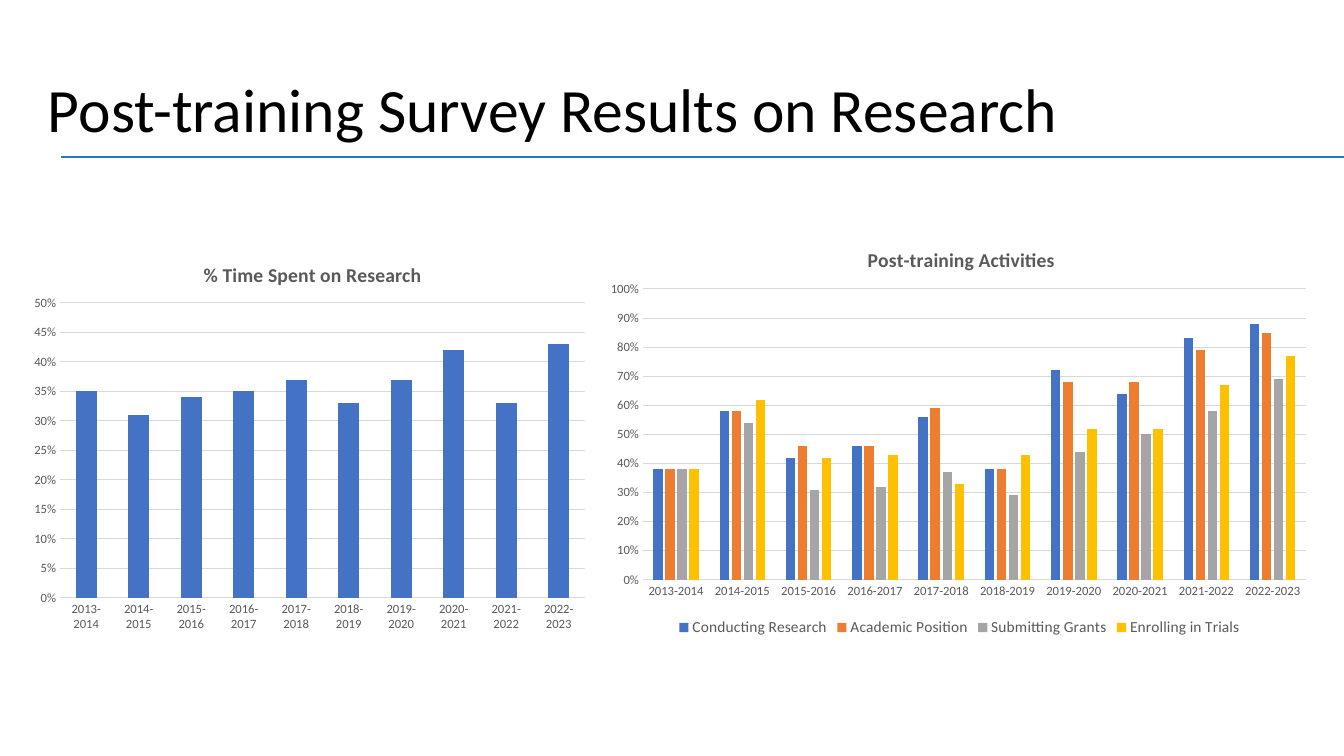
from lxml import etree
from pptx import Presentation
from pptx.chart.data import CategoryChartData
from pptx.dml.color import RGBColor
from pptx.enum.chart import XL_CHART_TYPE, XL_LEGEND_POSITION, XL_TICK_MARK
from pptx.enum.text import MSO_ANCHOR
from pptx.oxml import parse_xml
from pptx.oxml.ns import nsdecls, qn
from pptx.util import Pt

STACKED, CLUSTERED = XL_CHART_TYPE.COLUMN_STACKED, XL_CHART_TYPE.COLUMN_CLUSTERED
BOTTOM, NO_TICK, MIDDLE = XL_LEGEND_POSITION.BOTTOM, XL_TICK_MARK.NONE, MSO_ANCHOR.MIDDLE

# Content
FONT, GREY, GRID = "Calibri", "595959", "D9D9D9"
TITLE = "Post-training Survey Results on Research"
YEARS = [f"{year}-{year + 1}" for year in range(2013, 2023)]

# Boxes are left, top, width, height in px on the slide
CHARTS = [
    {
        "title": "% Time Spent on Research", "type": STACKED,
        "box": (23, 239, 574, 401), "plot": (60, 303, 525, 295), "title_at": (200, 258),
        "gap": 150, "overlap": 100, "max": 0.5, "step": 0.05,
        "axis_line": False, "legend": False,
        "series": [
            ("Series 1", "4472C4", (35, 31, 34, 35, 37, 33, 37, 42, 33, 43)),
        ],
    },
    {
        "title": "Post-training Activities", "type": CLUSTERED,
        "box": (597, 224, 725, 417), "plot": (643, 289, 663, 291), "title_at": (864, 243),
        "gap": 219, "overlap": -27, "max": 1, "step": 0.1,
        "axis_line": True, "legend": True,
        "series": [
            ("Conducting Research", "4472C4", (38, 58, 42, 46, 56, 38, 72, 64, 83, 88)),
            ("Academic Position", "ED7D31", (38, 58, 46, 46, 59, 38, 68, 68, 79, 85)),
            ("Submitting Grants", "A5A5A5", (38, 54, 31, 32, 37, 29, 44, 50, 58, 69)),
            ("Enrolling in Trials", "FFC000", (38, 62, 42, 43, 33, 43, 52, 52, 67, 77)),
        ],
    },
]


def px(n):
    return round(n * 914400 / 100.8)


def rgb(value):
    return RGBColor.from_string(value)


def style(font, size, color, **format_values):
    values = {"name": FONT, "size": Pt(size), "bold": False, **format_values}
    for key, value in values.items():
        setattr(font, key, value)
    font.color.rgb = rgb(color)


def outline(line, color, width):
    line.color.rgb = rgb(color)
    line.width = Pt(width)


def set_layout(parent, index, box, area, inner=False):
    """Place a chart part at a px area, as fractions of the chart box."""
    for old in parent.findall(qn("c:layout")):
        parent.remove(old)
    left, top, width, height = box
    fractions = [(area[0] - left) / width, (area[1] - top) / height]
    fractions += [n / whole for n, whole in zip(area[2:], (width, height))]
    layout = parse_xml(f"<c:layout {nsdecls('c')}><c:manualLayout/></c:layout>")
    values = [("layoutTarget", "inner")] if inner else []
    values += [("xMode", "edge"), ("yMode", "edge")]
    values += [(k, f"{v:.4f}") for k, v in zip("xywh", fractions)]
    for tag, value in values:
        etree.SubElement(layout[0], qn(f"c:{tag}")).set("val", value)
    parent.insert(index, layout)


def add_column_chart(slide, spec_values):
    c = spec_values
    data = CategoryChartData(number_format="0%")
    data.categories = YEARS
    for name, _, percents in c["series"]:
        data.add_series(name, [n / 100 for n in percents])
    chart = slide.shapes.add_chart(c["type"], *map(px, c["box"]), data).chart
    style(chart.font, 10, "000000")

    # Title
    chart.has_title = True
    tf = chart.chart_title.text_frame
    tf.text = c["title"]
    style(tf.paragraphs[0].runs[0].font, 14, GREY, bold=True)
    set_layout(chart.chart_title._element, 1, c["box"], c["title_at"])

    # Columns
    plot = chart.plots[0]
    plot.vary_by_categories = False
    plot.gap_width, plot.overlap = c["gap"], c["overlap"]
    for series, (_, color, _) in zip(plot.series, c["series"]):
        series.format.fill.solid()
        series.format.fill.fore_color.rgb = rgb(color)
    set_layout(chart._chartSpace.chart.plotArea, 0, c["box"], c["plot"], inner=True)

    # Axes
    for axis in (chart.category_axis, chart.value_axis):
        axis.major_tick_mark = axis.minor_tick_mark = NO_TICK
        style(axis.tick_labels.font, 9, GREY)
        axis.format.line.fill.background()
    if c["axis_line"]:
        outline(chart.category_axis.format.line, GRID, 0.75)
    value_axis = chart.value_axis
    value_axis.minimum_scale, value_axis.maximum_scale = 0, c["max"]
    value_axis.major_unit = c["step"]
    value_axis.tick_labels.number_format = "0%"
    value_axis.tick_labels.number_format_is_linked = False
    outline(value_axis.major_gridlines.format.line, GRID, 0.75)

    # Legend
    chart.has_legend = c["legend"]
    if c["legend"]:
        chart.legend.position = BOTTOM
        chart.legend.include_in_layout = False
        style(chart.legend.font, 11, GREY)


def main():
    prs = Presentation()
    prs.slide_width, prs.slide_height = px(1344), px(756)
    slide = prs.slides.add_slide(prs.slide_layouts[6])

    # Slide title
    tf = slide.shapes.add_textbox(*map(px, (38, 40, 1121, 146))).text_frame
    tf.word_wrap = True
    tf.vertical_anchor = MIDDLE
    p = tf.paragraphs[0]
    p.line_spacing = 0.9
    r = p.add_run()
    r.text = TITLE
    style(r.font, 44, "000000")

    for chart in CHARTS:
        add_column_chart(slide, chart)

    # Rule under the title
    rule = slide.shapes.add_connector(1, px(61), px(157), px(1344), px(157))
    outline(rule.line, "2E75B6", 1.5)
    etree.SubElement(rule._element.spPr, qn("a:effectLst"))

    prs.save("out.pptx")


if __name__ == "__main__":
    main()
